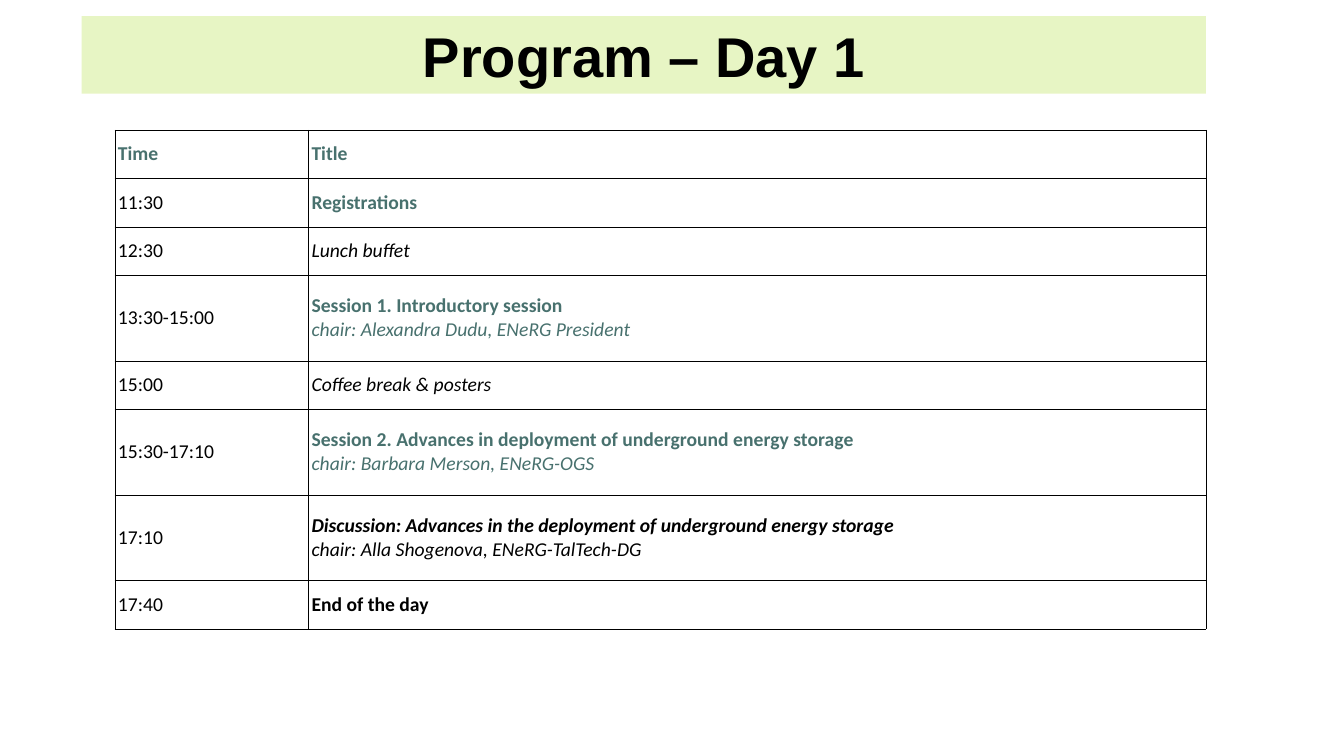
from lxml.etree import SubElement
from pptx import Presentation
from pptx.dml.color import RGBColor
from pptx.enum.text import MSO_ANCHOR, MSO_AUTO_SIZE, PP_ALIGN
from pptx.oxml.ns import qn
from pptx.util import Inches, Pt

TITLE = "Program – Day 1"
BLACK, GREEN, LIME = "000000", "48716E", "D4EE92"
LIME_OPACITY = 54

PLAIN = (BLACK, False, False)
ITALIC = (BLACK, False, True)
BOLD = (BLACK, True, False)
BOLD_ITALIC = (BLACK, True, True)
GREEN_BOLD = (GREEN, True, False)
GREEN_ITALIC = (GREEN, False, True)

PROGRAM = [
    (("Time", GREEN_BOLD), [("Title", GREEN_BOLD)]),
    (("11:30", PLAIN), [("Registrations", GREEN_BOLD)]),
    (("12:30", PLAIN), [("Lunch buffet", ITALIC)]),
    (("13:30-15:00", PLAIN), [
        ("Session 1. Introductory session", GREEN_BOLD),
        ("chair: Alexandra Dudu, ENeRG President", GREEN_ITALIC)]),
    (("15:00", PLAIN), [("Coffee break & posters", ITALIC)]),
    (("15:30-17:10", PLAIN), [
        ("Session 2. Advances in deployment of underground energy storage", GREEN_BOLD),
        ("chair: Barbara Merson, ENeRG-OGS", GREEN_ITALIC)]),
    (("17:10", PLAIN), [
        ("Discussion: Advances in the deployment of underground energy storage", BOLD_ITALIC),
        ("chair: Alla Shogenova, ENeRG-TalTech-DG", ITALIC)]),
    (("17:40", PLAIN), [("End of the day", BOLD)]),
]
COLUMN_WIDTHS = [1.92, 8.9]
ROW_HEIGHTS = {1: 0.48, 2: 0.85}


def color(value):
    return RGBColor.from_string(value)


def add_borders(cell):
    properties = cell._tc.get_or_add_tcPr()
    for side in ("lnL", "lnR", "lnT", "lnB"):
        line = SubElement(properties, qn(f"a:{side}"), w=str(Pt(0.43)))
        fill = SubElement(line, qn("a:solidFill"))
        SubElement(fill, qn("a:srgbClr"), val=BLACK)


def fill_cell(cell, lines):
    add_borders(cell)
    cell.fill.background()
    cell.vertical_anchor = MSO_ANCHOR.MIDDLE
    cell.margin_left = cell.margin_right = Inches(0.03)
    cell.margin_top = cell.margin_bottom = Inches(0.02)
    cell.text = "\n".join(text for text, style in lines)
    for paragraph, (text, style) in zip(cell.text_frame.paragraphs, lines):
        font = paragraph.font
        font.name, font.size = "Calibri", Pt(14)
        hex_color, font.bold, font.italic = style
        font.color.rgb = color(hex_color)


def add_title(slide):
    title = slide.shapes.title
    title.left, title.top = Inches(0.81), Inches(0.16)
    title.width, title.height = Inches(11.15), Inches(0.77)
    title.fill.solid()
    title.fill.fore_color.rgb = color(LIME)
    lime = title.fill._xPr.find(f".//{qn('a:srgbClr')}")
    SubElement(lime, qn("a:alpha"), val=str(LIME_OPACITY * 1000))
    frame = title.text_frame
    frame.text = TITLE
    frame.auto_size = MSO_AUTO_SIZE.NONE
    frame.vertical_anchor = MSO_ANCHOR.MIDDLE
    paragraph = frame.paragraphs[0]
    paragraph.alignment = PP_ALIGN.CENTER
    font = paragraph.font
    font.name, font.size, font.bold = "Arial", Pt(40), True
    font.color.rgb = color(BLACK)


def add_program(slide):
    heights = [ROW_HEIGHTS[len(lines)] for time, lines in PROGRAM]
    table = slide.shapes.add_table(
        len(PROGRAM), len(COLUMN_WIDTHS), Inches(1.14), Inches(1.29),
        Inches(sum(COLUMN_WIDTHS)), Inches(sum(heights))).table
    table.first_row = table.horz_banding = False
    for column, width in zip(table.columns, COLUMN_WIDTHS):
        column.width = Inches(width)
    for row, height, (time, lines) in zip(table.rows, heights, PROGRAM):
        row.height = Inches(height)
        time_cell, title_cell = row.cells
        fill_cell(time_cell, [time])
        fill_cell(title_cell, lines)


def main():
    presentation = Presentation()
    presentation.slide_width = Inches(13.33)
    presentation.slide_height = Inches(7.5)
    slide = presentation.slides.add_slide(presentation.slide_layouts[5])
    add_title(slide)
    add_program(slide)
    presentation.save("out.pptx")


if __name__ == "__main__":
    main()
